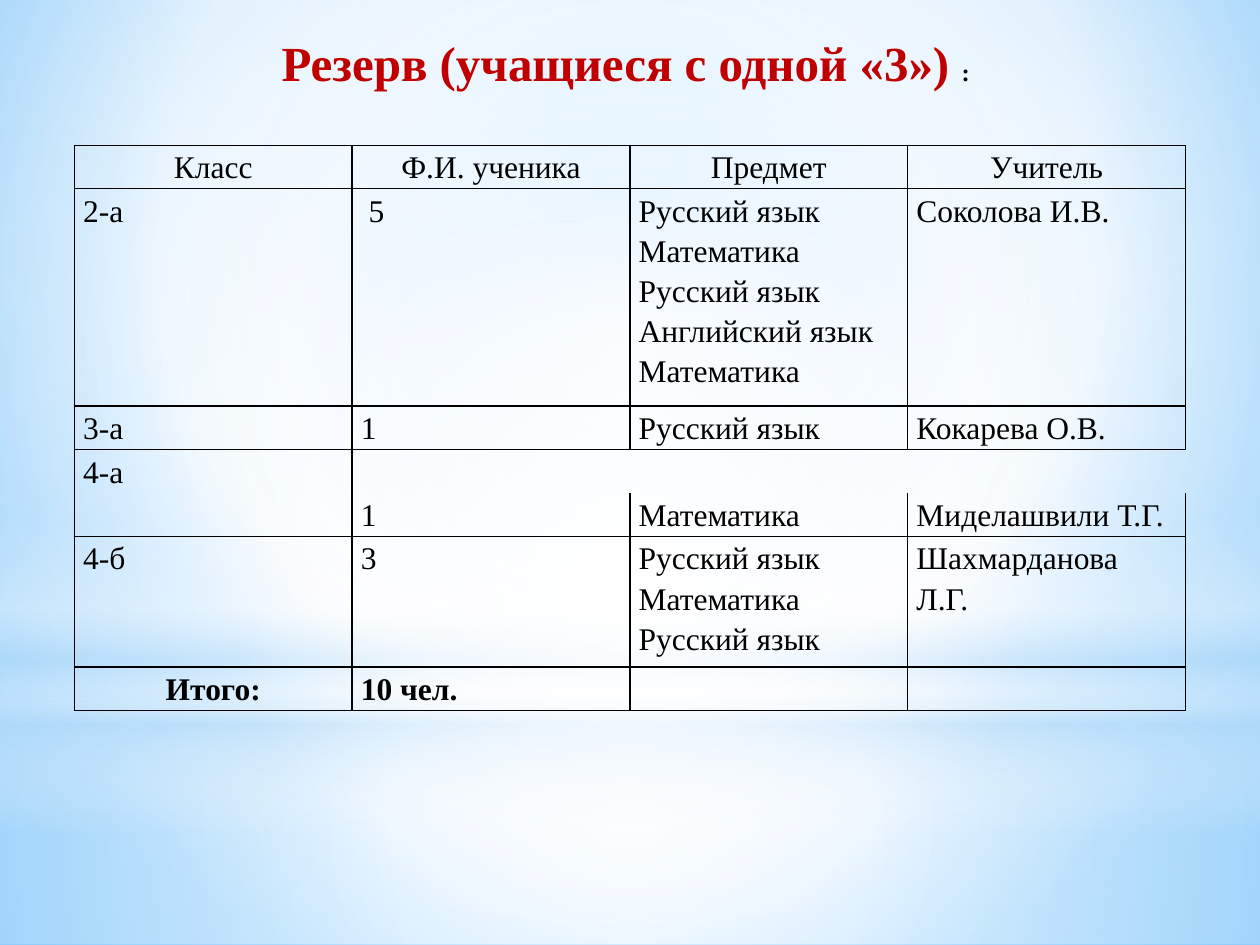
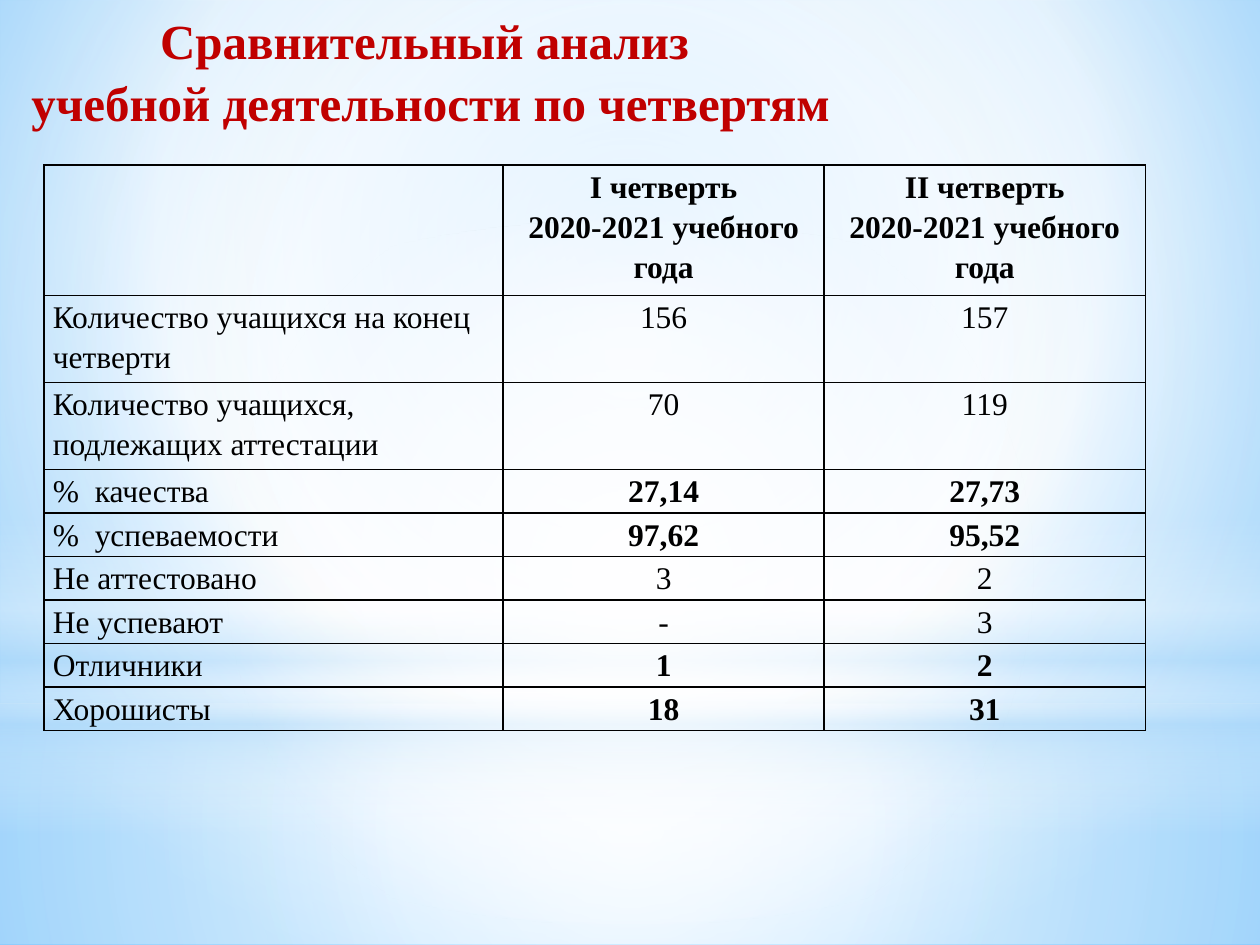
from lxml import etree
from pptx import Presentation
from pptx.enum import shapes, text
from pptx.dml.color import RGBColor
from pptx.oxml import ns, parse_xml
from pptx.util import Pt

HUES = {"ink": "000000", "red": "C00000", "white": "FFFFFF",
        "pale": "B4DCFA", "sky": "9ED5FF", "blue": "5BB9FF"}
FONT = "Times New Roman"
LINE = 24.85  # row height for each line of table text
PLAIN = "{2D5ABB26-0587-4C30-8999-92F81FD0307C}"  # table style without grid
MID = (50, 50, 50, 50)


def write(frame, lines, size=18, hue="ink", bold=False, mid=False, gap=1.15):
    """Put each line in its own paragraph."""
    for i, line in enumerate(lines):
        para = frame.paragraphs[0] if i == 0 else frame.add_paragraph()
        para.alignment = text.PP_ALIGN.CENTER if mid else text.PP_ALIGN.LEFT
        para.line_spacing = gap
        run = para.add_run()
        run.text = line
        run.font.name, run.font.size, run.font.bold = FONT, Pt(size), bold
        run.font.color.rgb = RGBColor.from_string(HUES[hue])


def blend(fill, root, stops, focus=None):
    """Give root a gradient: round about focus, or else downwards."""
    fill.solid()
    old = root.find(".//" + ns.qn("a:solidFill"))
    marks = "".join(
        f'<a:gs pos="{pos * 1000}"><a:srgbClr val="{HUES[hue]}">'
        f'<a:alpha val="{alpha * 1000}"/></a:srgbClr></a:gs>'
        for pos, hue, alpha in stops)
    way = '<a:lin ang="5400000" scaled="0"/>'
    if focus:
        sides = " ".join(f'{k}="{v * 1000}"' for k, v in zip("ltrb", focus))
        way = f'<a:path path="circle"><a:fillToRect {sides}/></a:path>'
    old.getparent().replace(old, parse_xml(
        f'<a:gradFill {ns.nsdecls("a")} rotWithShape="1">'
        f'<a:gsLst>{marks}</a:gsLst>{way}</a:gradFill>'))


deck = Presentation()
deck.slide_width, deck.slide_height = Pt(720), Pt(540)
blank = deck.slide_layouts[6]
pages = [deck.slides.add_slide(blank) for _ in range(2)]

# Shared backdrop, kept on the master
master = deck.slide_master
base = master.element.cSld
blend(master.background.fill, base,
      [(0, "sky", 100), (60, "white", 100), (100, "blue", 100)],
      (20, 10, 20, 60))
RECT, OVAL = shapes.MSO_SHAPE.RECTANGLE, shapes.MSO_SHAPE.OVAL
layers = [
    (RECT, 402, 138, MID,
     [(0, "white", 91), (37, "white", 76), (100, "pale", 79)]),
    (RECT, 0, 402, MID,
     [(0, "white", 89), (48, "white", 62), (100, "pale", 79)]),
    (RECT, 296.5, 180, None,
     [(0, "white", 0), (29, "white", 30), (45, "pale", 40),
      (55, "white", 26), (65, "pale", 60), (100, "white", 0)]),
    (OVAL, 126, 402, MID, [(0, "white", 100), (56, "white", 0)]),
]
for i, (kind, top, high, focus, stops) in enumerate(layers):
    glow = pages[0].shapes.add_shape(kind, 0, Pt(top), Pt(720), Pt(high))
    glow.shadow.inherit = False
    glow.line.fill.background()
    blend(glow.fill, glow.element, stops, focus)
    glow.element.nvSpPr.cNvPr.set("id", str(50 + i))
    base.spTree.insert(2 + i, glow.element)

# Titles
heads = [
    ((150.5, 13.5, 414, 41), ["Резерв (учащиеся с одной «3») "]),
    ((8.5, 0.75, 475, 108.5),
     ["Сравнительный анализ ", "учебной деятельности по четвертям"]),
]
for page, (box, lines) in zip(pages, heads):
    frame = page.shapes.add_textbox(*map(Pt, box)).text_frame
    frame.word_wrap = False
    frame.vertical_anchor = text.MSO_ANCHOR.TOP
    write(frame, lines, size=28, hue="red", bold=True, mid=True, gap=1.05)
    if page is pages[0]:
        colon = frame.paragraphs[0].add_run()
        colon.text = ":"
        colon.font.name, colon.font.size = FONT, Pt(14)
        colon.font.bold = True
        colon.font.color.rgb = RGBColor.from_string(HUES["ink"])

# Table contents; a line break starts a new paragraph
spare = [
    ["Класс", "Ф.И. ученика", "Предмет", "Учитель"],
    ["2-а", " 5", "Русский язык\nМатематика\nРусский язык\n"
     "Английский язык\nМатематика", "Соколова И.В."],
    ["3-а", "1", "Русский язык", "Кокарева О.В."],
    ["4-а", "", "", ""],
    ["", "1", "Математика", "Миделашвили Т.Г."],
    ["4-б", "3", "Русский язык\nМатематика\nРусский язык",
     "Шахмарданова Л.Г."],
    ["Итого:", "10 чел.", "", ""],
]
terms = [
    ["", "I четверть\n2020-2021 учебного года",
     "II четверть\n2020-2021 учебного года"],
    ["Количество учащихся на конец четверти", "156", "157"],
    ["Количество учащихся,\nподлежащих аттестации", "70", "119"],
    ["%  качества", "27,14", "27,73"],
    ["%  успеваемости", "97,62", "95,52"],
    ["Не аттестовано", "3", "2"],
    ["Не успевают", "-", "3"],
    ["Отличники", "1", "2"],
    ["Хорошисты", "18", "31"],
]
# page, rows, left, top, column widths, lines in each row,
# rule for centred cells, rule for bold cells, merged areas, open sides
grids = [
    (pages[0], spare, 42.5, 83, [158.75] * 4, [1, 5, 1, 1, 1, 3, 1],
     lambda r, c: r == 0 or (r, c) == (6, 0), lambda r, c: r == 6,
     [(3, 0, 4, 0), (3, 1, 3, 3)], {3: "RB", 4: "T"}),
    (pages[1], terms, 25.2, 94.3, [262.3, 183.5, 183.5],
     [3, 2, 2] + [1] * 6,
     lambda r, c: c > 0, lambda r, c: c > 0 and r in (0, 3, 4, 7, 8),
     [], {}),
]

# Tables
for page, rows, left, top, wide, high, mid, bold, merged, open_ in grids:
    item = page.shapes.add_table(
        len(rows), len(wide), Pt(left), Pt(top),
        Pt(sum(wide)), Pt(LINE * sum(high)))
    item.element.find(".//" + ns.qn("a:tableStyleId")).text = PLAIN
    grid = item.table
    grid.first_row = grid.horz_banding = False
    for col, size in zip(grid.columns, wide):
        col.width = Pt(size)
    for row, count in zip(grid.rows, high):
        row.height = Pt(LINE * count)
    for r0, c0, r1, c1 in merged:
        grid.cell(r0, c0).merge(grid.cell(r1, c1))

    for r, row in enumerate(rows):
        for c, words in enumerate(row):
            cell = grid.cell(r, c)
            cell.margin_left = cell.margin_right = Pt(5)
            cell.margin_top = cell.margin_bottom = 0
            cell.fill.background()
            if words:
                write(cell.text_frame, words.split("\n"),
                      mid=mid(r, c), bold=bold(r, c))
            # Cell borders
            props = cell._tc.get_or_add_tcPr()
            for n, side in enumerate("LRTB"):
                edge = etree.Element(ns.qn("a:ln" + side), w=str(Pt(1)))
                if c > 0 and side in open_.get(r, ""):
                    etree.SubElement(edge, ns.qn("a:noFill"))
                else:
                    ink = etree.SubElement(edge, ns.qn("a:solidFill"))
                    etree.SubElement(ink, ns.qn("a:srgbClr"),
                                     val=HUES["ink"])
                props.insert(n, edge)

deck.save("out.pptx")
